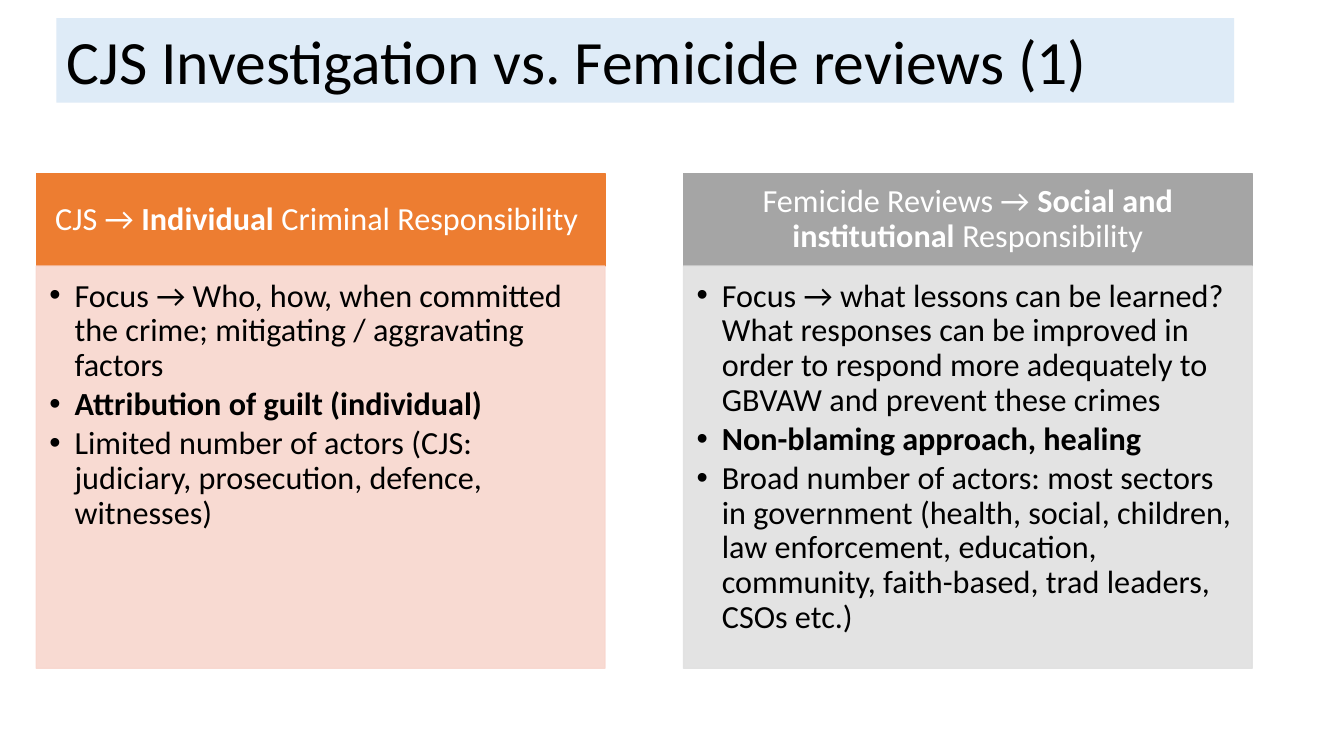
"""Builds a slide comparing CJS investigations with femicide reviews."""
from lxml.etree import SubElement
from pptx import Presentation
from pptx.dml.color import RGBColor
from pptx.enum.shapes import MSO_SHAPE
from pptx.enum.text import MSO_ANCHOR, PP_ALIGN
from pptx.oxml.ns import qn
from pptx.util import Pt

PX = 9144
COLORS = {
    "title": "DEEBF7", "black": "000000", "white": "FFFFFF",
    "orange": "ED7D31", "peach": "F8D7CE", "gray": "A5A5A5", "silver": "E1E1E1",
}


def add_box(box, fill, anchor, insets, outlined=True, alpha=None):
    shape = slide.shapes.add_shape(MSO_SHAPE.RECTANGLE, *[v * PX for v in box])
    shape.shadow.inherit = False
    paints = [shape.fill]
    if outlined:
        shape.line.width = Pt(1)
        paints.append(shape.line.fill)
    else:
        shape.line.fill.background()
    for paint in paints:
        paint.solid()
        paint.fore_color.rgb = RGBColor.from_string(COLORS[fill])
    if alpha:
        for color in shape._element.spPr.iter(qn("a:srgbClr")):
            SubElement(color, qn("a:alpha"), val=str(alpha * 1000))
    frame = shape.text_frame
    frame.word_wrap = True
    frame.vertical_anchor = anchor
    frame.margin_left, frame.margin_top, frame.margin_right, frame.margin_bottom = [
        v * PX for v in insets]
    return frame


def write(paragraph, pieces, size, color, align=PP_ALIGN.LEFT):
    paragraph.alignment = align
    paragraph.line_spacing = 0.9
    for text, bold in pieces:
        run = paragraph.add_run()
        run.text = text
        run.font.name = "Calibri"
        run.font.size = Pt(size)
        run.font.bold = bold
        run.font.color.rgb = RGBColor.from_string(COLORS[color])


prs = Presentation()
prs.slide_width, prs.slide_height = 1333 * PX, 750 * PX
slide = prs.slides.add_slide(prs.slide_layouts[6])

title = add_box((56, 18, 1168, 84), "title", MSO_ANCHOR.BOTTOM, (10, 5, 10, 5), outlined=False)
write(title.paragraphs[0], [("CJS Investigation vs. Femicide reviews (1)", False)], 44, "black")

COLUMNS = [
    ("orange", "peach",
     [("CJS → ", False), ("Individual", True), (" Criminal Responsibility ", False)],
     [("Focus → Who, how, when committed the crime; mitigating / aggravating factors", False),
      ("Attribution of guilt (individual)", True),
      ("Limited number of actors (CJS: judiciary, prosecution, defence, witnesses)", False)]),
    ("gray", "silver",
     [("Femicide Reviews → ", False), ("Social and institutional ", True),
      ("Responsibility", False)],
     [("Focus → what lessons can be learned? What responses can be improved in order to "
       "respond more adequately to GBVAW and prevent these crimes", False),
      ("Non-blaming approach, healing", True),
      ("Broad number of actors: most sectors in government (health, social, children, "
       "law enforcement, education, community, faith-based, trad leaders, CSOs etc.)", False)]),
]

for index, (heading_fill, body_fill, heading_pieces, points) in enumerate(COLUMNS):
    left = 36 + index * 642
    heading = add_box((left, 172, 564, 92), heading_fill, MSO_ANCHOR.MIDDLE, (18, 10, 18, 10))
    write(heading.paragraphs[0], heading_pieces, 23, "white", PP_ALIGN.CENTER)

    body = add_box((left, 264, 564, 399), body_fill, MSO_ANCHOR.TOP, (13, 13, 18, 20), alpha=90)
    for number, point in enumerate(points):
        paragraph = body.add_paragraph() if number else body.paragraphs[0]
        write(paragraph, [point], 23, "black")
        paragraph.space_after = Pt(3)
        properties = paragraph._p.get_or_add_pPr()
        properties.set("marL", str(25 * PX))
        properties.set("indent", str(-25 * PX))
        SubElement(properties, qn("a:buFont"), typeface="Arial")
        SubElement(properties, qn("a:buChar"), char="•")

prs.save("out.pptx")
